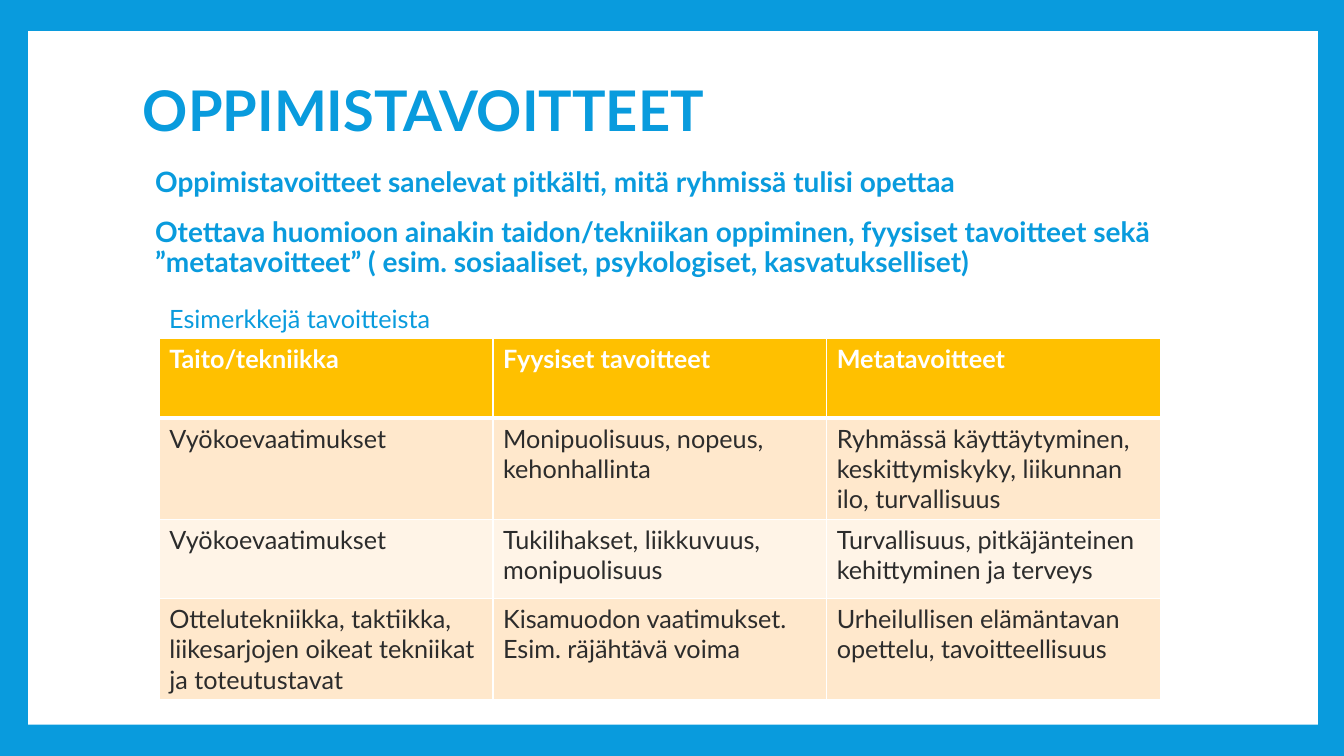
import pptx
import pptx.dml.color
import pptx.enum.shapes
import pptx.enum.text
import pptx.oxml.ns
import pptx.util
from lxml import etree
from pptx.util import Inches

THEME = {
    "font": "Lato",
    "blue": "099BDD", "white": "FFFFFF", "dark": "2C2C2C", "header": "FFC000",
    "bands": ["FFE8CC", "FFF4E7"],
    "title": 40, "body": 20, "table": 18,
}


def style(p, size, color, bold=False):
    for r in p.runs:
        r.font.name = THEME["font"]
        r.font.size = pptx.util.Pt(size)
        r.font.bold = bold
        r.font.color.rgb = pptx.dml.color.RGBColor.from_string(color)


def add_text(left, top, width, height, lines, size, bold=False, wrap=True):
    tf = s.shapes.add_textbox(Inches(left), Inches(top), Inches(width), Inches(height)).text_frame
    tf.word_wrap = wrap
    tf.text = "\n".join(lines)
    for p in tf.paragraphs:
        style(p, size, THEME["blue"], bold)
    return tf


prs = pptx.Presentation()
prs.slide_width, prs.slide_height = Inches(13.33), Inches(7.5)
s = prs.slides.add_slide(prs.slide_layouts[6])

# Blue frame around a white panel
s.background.fill.solid()
s.background.fill.fore_color.rgb = pptx.dml.color.RGBColor.from_string(THEME["blue"])
panel = s.shapes.add_shape(pptx.enum.shapes.MSO_SHAPE.RECTANGLE,
                           Inches(0.28), Inches(0.31), Inches(12.79), Inches(6.88))
panel.shadow.inherit = False
panel.fill.solid()
panel.fill.fore_color.rgb = pptx.dml.color.RGBColor.from_string(THEME["white"])
panel.line.fill.background()

# Title
tf = add_text(1.32, 0.31, 10.7, 1.65, ["OPPIMISTAVOITTEET"], THEME["title"], bold=True)
tf.vertical_anchor = pptx.enum.text.MSO_ANCHOR.MIDDLE
tf.paragraphs[0].line_spacing = 0.85

# Main points
points = [
    "Oppimistavoitteet sanelevat pitkälti, mitä ryhmissä tulisi opettaa",
    "Otettava huomioon ainakin taidon/tekniikan oppiminen, fyysiset tavoitteet sekä "
    "”metatavoitteet” ( esim. sosiaaliset, psykologiset, kasvatukselliset)",
]
tf = add_text(1.24, 1.62, 10.7, 1.3, points, THEME["body"], bold=True)
for p in tf.paragraphs:
    p.line_spacing = 0.9
    p.space_before = pptx.util.Pt(12)
    p.space_after = pptx.util.Pt(2)
    p._p.get_or_add_pPr().set("marL", str(Inches(0.2)))

# Table of goals
rows = [
    ["Taito/tekniikka", "Fyysiset tavoitteet", "Metatavoitteet"],
    ["Vyökoevaatimukset", "Monipuolisuus, nopeus, kehonhallinta",
     "Ryhmässä käyttäytyminen, keskittymiskyky, liikunnan ilo, turvallisuus"],
    ["Vyökoevaatimukset", "Tukilihakset, liikkuvuus, monipuolisuus",
     "Turvallisuus, pitkäjänteinen kehittyminen ja terveys"],
    ["Ottelutekniikka, taktiikka, liikesarjojen oikeat tekniikat ja toteutustavat",
     "Kisamuodon vaatimukset. Esim. räjähtävä voima",
     "Urheilullisen elämäntavan opettelu, tavoitteellisuus"],
]
table = s.shapes.add_table(len(rows), 3, Inches(1.58), Inches(3.36),
                           Inches(9.93), Inches(0.79 * len(rows))).table
for i, texts in enumerate(rows):
    is_header = i == 0
    fill = THEME["header"] if is_header else THEME["bands"][(i - 1) % 2]
    for j, text in enumerate(texts):
        cell = table.cell(i, j)
        cell.text = text
        style(cell.text_frame.paragraphs[0], THEME["table"],
              THEME["white"] if is_header else THEME["dark"], is_header)
        # White borders, thicker between the header and the first row
        tcPr = cell._tc.get_or_add_tcPr()
        for side in ("lnL", "lnR", "lnT", "lnB"):
            thick = (i, side) in [(0, "lnB"), (1, "lnT")]
            ln = etree.SubElement(tcPr, pptx.oxml.ns.qn("a:" + side),
                                  w=str(pptx.util.Pt(3 if thick else 1)))
            solid = etree.SubElement(ln, pptx.oxml.ns.qn("a:solidFill"))
            etree.SubElement(solid, pptx.oxml.ns.qn("a:srgbClr"), val=THEME["white"])
        cell.fill.solid()
        cell.fill.fore_color.rgb = pptx.dml.color.RGBColor.from_string(fill)

# Table caption
add_text(1.58, 2.96, 2.97, 0.4, ["Esimerkkejä tavoitteista"], THEME["table"], wrap=False)

prs.save("out.pptx")
